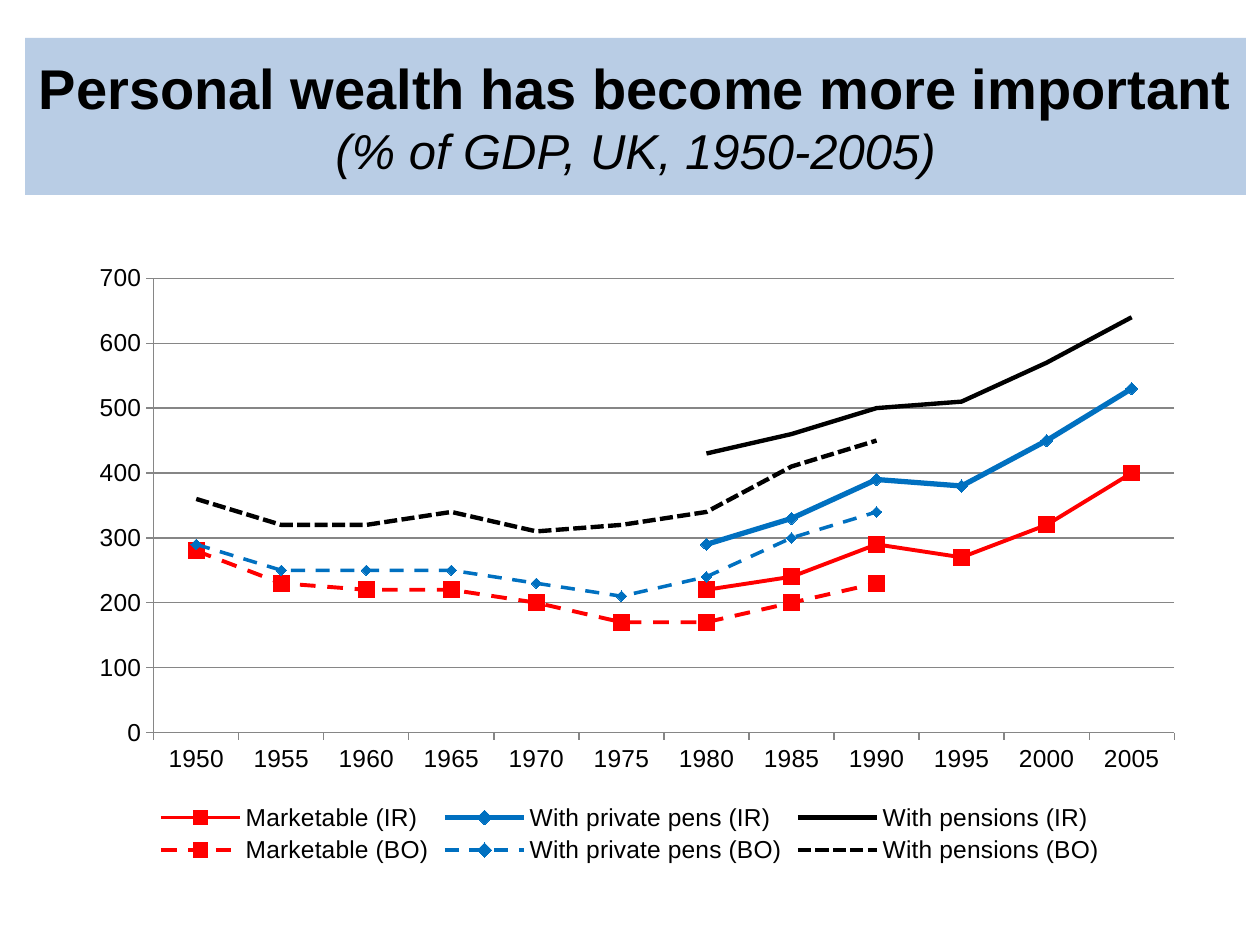
"""Build a slide with a line chart of UK personal wealth as a share of GDP."""
from pptx import Presentation
from pptx.chart.data import CategoryChartData
from pptx.dml.color import RGBColor
from pptx.enum.chart import XL_CHART_TYPE as ChartType, XL_LEGEND_POSITION as LegendPosition
from pptx.enum.chart import XL_MARKER_STYLE as Marker, XL_TICK_MARK as TickMark
from pptx.enum.dml import MSO_LINE as Dash
from pptx.enum.text import MSO_ANCHOR as Anchor, PP_ALIGN as Align
from pptx.oxml import parse_xml
from pptx.oxml.ns import nsdecls
from pptx.util import Pt

PX = 914400 / 126
BLACK = RGBColor(0x00, 0x00, 0x00)
RED = RGBColor(0xFF, 0x00, 0x00)
BLUE = RGBColor(0x00, 0x70, 0xC0)
PALE_BLUE = RGBColor(0xB9, 0xCD, 0xE5)
GREY = RGBColor(0x86, 0x86, 0x86)
FONT = "Arial"

SLIDE_SIZE = (1260, 945)
TITLE_BOX = (25, 38, 1221, 157)
CHART_BOX = (63, 220, 1134, 649)
PLOT_AREA = {"x": 0.08, "y": 0.09, "w": 0.9, "h": 0.7}

TITLE_RUNS = [
    ("Personal wealth has become more important ",
     {"size": Pt(32), "bold": True, "italic": False}),
    ("(% of GDP, UK, 1950-2005)",
     {"size": Pt(28), "bold": False, "italic": True}),
]
YEARS = [str(year) for year in range(1950, 2006, 5)]
SERIES = [
    ("Marketable (IR)", 1980, [220, 240, 290, 270, 320, 400],
     RED, 2.25, Dash.SOLID, Marker.SQUARE, 9),
    ("With private pens (IR)", 1980, [290, 330, 390, 380, 450, 530],
     BLUE, 3, Dash.SOLID, Marker.DIAMOND, 7),
    ("With pensions (IR)", 1980, [430, 460, 500, 510, 570, 640],
     BLACK, 2.5, Dash.SOLID, Marker.NONE, None),
    ("Marketable (BO)", 1950, [280, 230, 220, 220, 200, 170, 170, 200, 230],
     RED, 2.25, Dash.DASH, Marker.SQUARE, 9),
    ("With private pens (BO)", 1950, [290, 250, 250, 250, 230, 210, 240, 300, 340],
     BLUE, 2, Dash.DASH, Marker.DIAMOND, 6),
    ("With pensions (BO)", 1950, [360, 320, 320, 340, 310, 320, 340, 410, 450],
     BLACK, 2.5, Dash.SQUARE_DOT, Marker.NONE, None),
]


def to_emu(lengths):
    return [round(length * PX) for length in lengths]


def set_format(target, values):
    for name, value in values.items():
        setattr(target, name, value)


def set_font(font, **values):
    set_format(font, {"name": FONT, **values})
    font.color.rgb = BLACK


def set_line(line, color, width, dash=Dash.SOLID):
    line.color.rgb = color
    set_format(line, {"width": Pt(width), "dash_style": dash})


def fill_title(title):
    left, top, width, height = to_emu(TITLE_BOX)
    set_format(title, {"left": left, "top": top, "width": width, "height": height})
    title.fill.solid()
    title.fill.fore_color.rgb = PALE_BLUE
    set_format(title.text_frame, {"word_wrap": True, "vertical_anchor": Anchor.MIDDLE})
    paragraph = title.text_frame.paragraphs[0]
    paragraph.alignment = Align.CENTER
    for text, values in TITLE_RUNS:
        run = paragraph.add_run()
        run.text = text
        set_font(run.font, **values)


def place_plot(chart):
    plot_area = chart.element.xpath(".//c:plotArea")[0]
    for layout in plot_area.xpath("./c:layout"):
        plot_area.remove(layout)
    modes = '<c:xMode val="edge"/><c:yMode val="edge"/>'
    sizes = "".join(f'<c:{name} val="{value}"/>' for name, value in PLOT_AREA.items())
    plot_area.insert(0, parse_xml(
        f'<c:layout {nsdecls("c")}><c:manualLayout><c:layoutTarget val="inner"/>'
        f"{modes}{sizes}</c:manualLayout></c:layout>"))


def format_series(series, color, width, dash, marker, marker_size):
    series.smooth = False
    set_line(series.format.line, color, width, dash)
    series.marker.style = marker
    if marker_size:
        series.marker.size = marker_size
        series.marker.format.fill.solid()
        series.marker.format.fill.fore_color.rgb = color
        set_line(series.marker.format.line, color, 0.75)


def add_wealth_chart(slide):
    data = CategoryChartData()
    data.categories = YEARS
    for name, first_year, values, *_ in SERIES:
        before = [None] * YEARS.index(str(first_year))
        after = [None] * (len(YEARS) - len(before) - len(values))
        data.add_series(name, before + values + after)
    chart = slide.shapes.add_chart(
        ChartType.LINE_MARKERS, *to_emu(CHART_BOX), data).chart
    set_font(chart.font, size=Pt(10))
    set_format(chart, {"has_title": False, "has_legend": True})
    set_format(chart.legend, {"position": LegendPosition.BOTTOM, "include_in_layout": False})
    set_font(chart.legend.font, size=Pt(14))
    chart.plots[0].vary_by_categories = False
    for axis in (chart.category_axis, chart.value_axis):
        set_format(axis, {"major_tick_mark": TickMark.OUTSIDE,
                          "minor_tick_mark": TickMark.NONE})
        set_font(axis.tick_labels.font, size=Pt(14))
        set_line(axis.format.line, GREY, 0.75)
    set_format(chart.value_axis, {"minimum_scale": 0, "maximum_scale": 700,
                                  "major_unit": 100, "has_major_gridlines": True})
    set_line(chart.value_axis.major_gridlines.format.line, GREY, 0.75)
    for series, (_, _, _, *style) in zip(chart.plots[0].series, SERIES):
        format_series(series, *style)
    place_plot(chart)


def main():
    presentation = Presentation()
    presentation.slide_width, presentation.slide_height = to_emu(SLIDE_SIZE)
    slide = presentation.slides.add_slide(presentation.slide_layouts[5])
    fill_title(slide.shapes.title)
    add_wealth_chart(slide)
    presentation.save("out.pptx")


if __name__ == "__main__":
    main()
